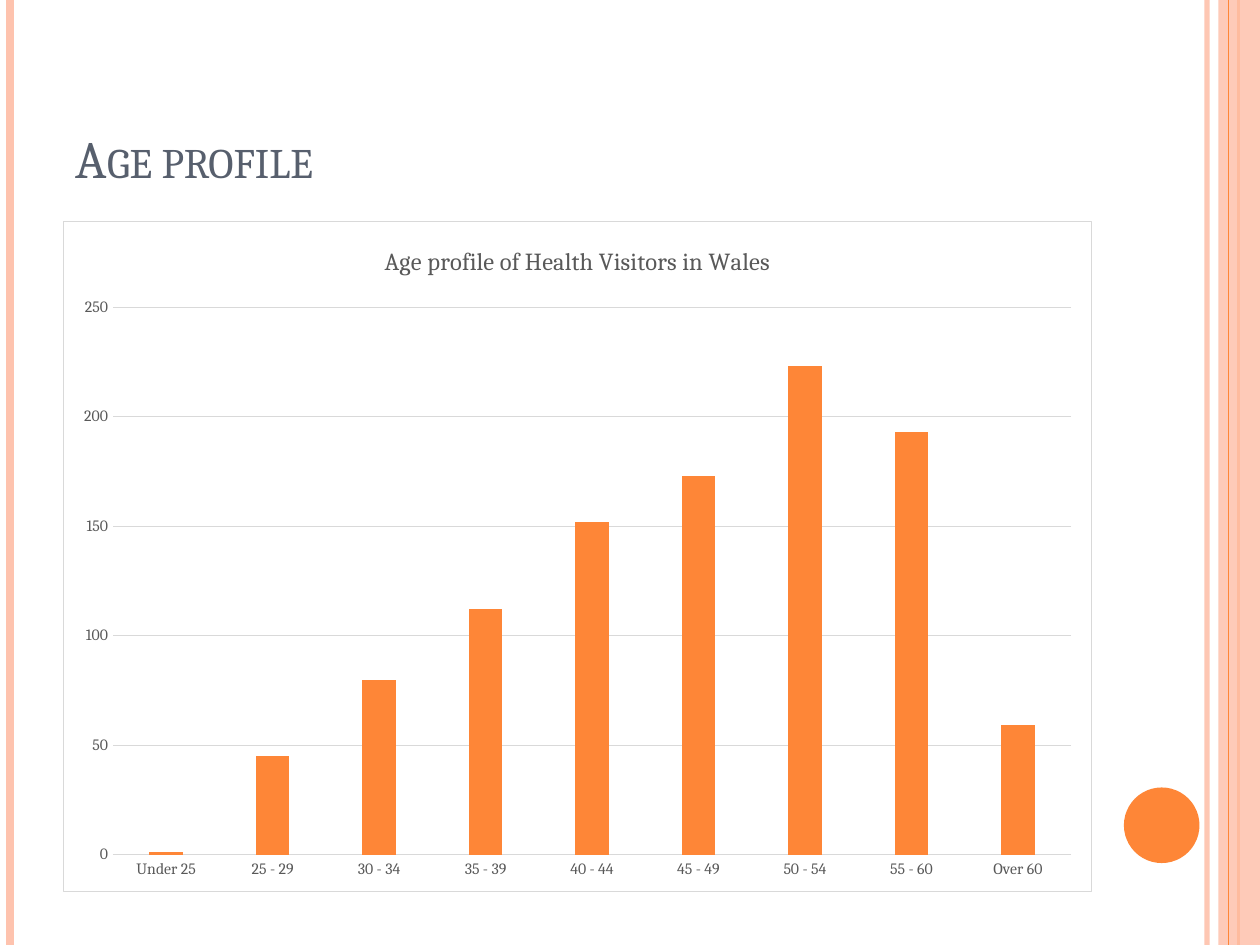
from lxml.etree import SubElement
from pptx import Presentation
from pptx.chart.data import CategoryChartData
from pptx.dml.color import RGBColor
from pptx.enum.chart import XL_CHART_TYPE, XL_TICK_MARK
from pptx.enum.shapes import MSO_CONNECTOR, MSO_SHAPE
from pptx.enum.text import MSO_ANCHOR, MSO_AUTO_SIZE, PP_ALIGN
from pptx.oxml import parse_xml
from pptx.oxml.ns import nsdecls, qn
from pptx.util import Inches, Pt

ORANGE = RGBColor(0xFE, 0x86, 0x37)
PEACH = RGBColor(0xFE, 0xC3, 0xAE)
SLATE = RGBColor(0x57, 0x5F, 0x6D)
GRAY = RGBColor(0x59, 0x59, 0x59)
PALE_GRAY = RGBColor(0xD9, 0xD9, 0xD9)
FONT = "Cambria"
WIDTH, HEIGHT = 10, 7.5
LEFT, CONTENT_WIDTH = 0.5, 8.17

AGE_GROUPS = {
    "Under 25": 1, "25 - 29": 45, "30 - 34": 80, "35 - 39": 112, "40 - 44": 152,
    "45 - 49": 173, "50 - 54": 223, "55 - 60": 193, "Over 60": 59,
}


class SlideBuilder:
    """Holds the style and the current slide, and adds its elements."""

    def __init__(self, presentation):
        self.slide = presentation.slides.add_slide(presentation.slide_layouts[5])
        self.shapes = self.slide.shapes

    def set_font(self, font, size, color):
        font.name, font.size = FONT, Pt(size)
        font.bold = False
        font.color.rgb = color

    def set_opacity(self, fill_holder, percent):
        color = fill_holder.find(".//" + qn("a:srgbClr"))
        SubElement(color, qn("a:alpha"), val=str(percent * 1000))

    def stripe(self, x, color, weight, opacity=100):
        line = self.shapes.add_connector(
            MSO_CONNECTOR.STRAIGHT, Inches(x), 0, Inches(x), Inches(HEIGHT))
        line.line.color.rgb = color
        line.line.width = Pt(weight)
        properties = line._element.spPr
        if opacity < 100:
            self.set_opacity(properties, opacity)
        SubElement(properties, qn("a:effectLst"))

    def solid(self, kind, left, top, width, height, color, opacity=100):
        shape = self.shapes.add_shape(kind, *map(Inches, (left, top, width, height)))
        shape.shadow.inherit = False
        shape.fill.solid()
        shape.fill.fore_color.rgb = color
        shape.line.fill.background()
        if opacity < 100:
            self.set_opacity(shape._element.spPr, opacity)

    def title(self, text, top, height):
        title = self.shapes.title
        title.left, title.top, title.width, title.height = map(
            Inches, (LEFT, top, CONTENT_WIDTH, height))
        frame = title.text_frame
        frame.text = text
        frame.vertical_anchor = MSO_ANCHOR.BOTTOM
        frame.auto_size = MSO_AUTO_SIZE.NONE
        paragraph = frame.paragraphs[0]
        paragraph.alignment = PP_ALIGN.LEFT
        self.set_font(paragraph.font, 30, SLATE)
        paragraph.runs[0].font._element.set("cap", "small")

    def column_chart(self, heading, values, top, height):
        data = CategoryChartData()
        data.categories = list(values)
        data.add_series("Series 1", list(values.values()))
        chart = self.shapes.add_chart(
            XL_CHART_TYPE.COLUMN_CLUSTERED,
            *map(Inches, (LEFT, top, CONTENT_WIDTH, height)), data).chart
        chart.font.name, chart.font.size = FONT, Pt(10)
        chart.has_legend = False
        chart.has_title = True
        chart.chart_title.include_in_layout = False
        frame = chart.chart_title.text_frame
        frame.text = heading
        self.set_font(frame.paragraphs[0].font, 14, GRAY)

        for axis in (chart.category_axis, chart.value_axis):
            axis.major_tick_mark = axis.minor_tick_mark = XL_TICK_MARK.NONE
            self.set_font(axis.tick_labels.font, 9, GRAY)
        chart.value_axis.format.line.fill.background()
        gridlines = chart.value_axis.major_gridlines
        for line in (chart.category_axis.format.line, gridlines.format.line):
            line.color.rgb = PALE_GRAY
            line.width = Pt(0.75)

        plot = chart.plots[0]
        plot.gap_width, plot.overlap = 219, -27
        plot.vary_by_categories = False
        fill = plot.series[0].format.fill
        fill.solid()
        fill.fore_color.rgb = ORANGE
        self.chart_frame(chart)

    def chart_frame(self, chart):
        chart._chartSpace.find(qn("c:chart")).addnext(parse_xml(
            f'<c:spPr {nsdecls("c", "a")}>'
            '<a:solidFill><a:srgbClr val="FFFFFF"/></a:solidFill>'
            f'<a:ln w="{Pt(0.75)}"><a:solidFill><a:srgbClr val="{PALE_GRAY}"/>'
            '</a:solidFill></a:ln></c:spPr>'))


def main():
    presentation = Presentation()
    presentation.slide_width, presentation.slide_height = Inches(WIDTH), Inches(HEIGHT)
    builder = SlideBuilder(presentation)
    builder.stripe(9.58, PEACH, 3, opacity=93)
    builder.stripe(0.08, PEACH, 4.5)
    builder.stripe(9.83, ORANGE, 1.5)
    builder.solid(MSO_SHAPE.RECTANGLE, 9.67, 0, 0.33, HEIGHT, PEACH, opacity=87)
    builder.stripe(9.75, ORANGE, 0.75)
    builder.solid(MSO_SHAPE.OVAL, 8.92, 6.25, 0.6, 0.6, ORANGE)
    builder.title("Age profile", 0.3, 1.25)
    builder.column_chart("Age profile of Health Visitors in Wales", AGE_GROUPS, 1.75, 5.33)
    presentation.save("out.pptx")


if __name__ == "__main__":
    main()
